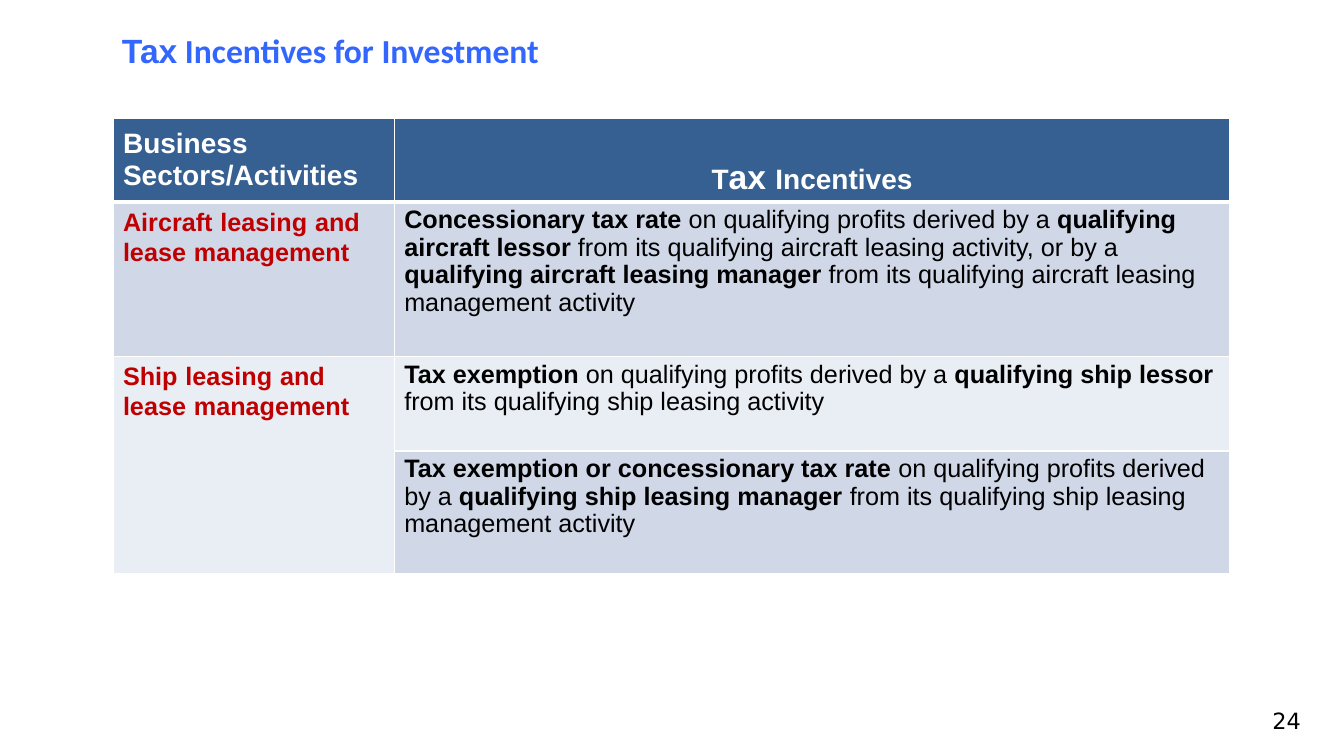
from lxml import etree
from pptx import Presentation
from pptx import util as u
from pptx.dml.color import RGBColor
from pptx.enum import text
from pptx.oxml.ns import qn

W, H = 13.33, 7.5
COLORS = {"title": "3366FF", "header": "376092", "dark": "D0D8E8", "light": "E9EDF4",
          "sector": "C00000", "body": "000000", "white": "FFFFFF"}
COLUMNS = [2.79, 8.29]
ROWS = [0.83, 1.53, 0.94, 1.22]
SECTORS = ["Aircraft leasing and lease management", "Ship leasing and lease management"]
INCENTIVES = [
    ["Concessionary tax rate ", "on qualifying profits derived by a ",
     "qualifying aircraft lessor", " from its qualifying aircraft leasing activity, or by a ",
     "qualifying aircraft leasing manager ",
     "from its qualifying aircraft leasing management activity"],
    ["Tax exemption ", "on qualifying profits derived by a ",
     "qualifying ship lessor ", "from its qualifying ship leasing activity"],
    ["Tax exemption or concessionary tax rate ", "on qualifying profits derived by a ",
     "qualifying ship leasing manager ",
     "from its qualifying ship leasing management activity"],
]


def add_run(p, words, size=18, bold=True, color="body", font="Arial"):
    r = p.add_run()
    r.text = words
    r.font.size = u.Pt(size)
    r.font.bold = bold
    r.font.name = font
    r.font.color.rgb = RGBColor.from_string(COLORS[color])


def add_box(slide, left, top, width, height, anchor):
    tf = slide.shapes.add_textbox(*map(u.Inches, (left, top, width, height))).text_frame
    tf.word_wrap = True
    tf.vertical_anchor = anchor
    return tf


def add_title(slide, left, top, width, height):
    tf = add_box(slide, left, top, width, height, text.MSO_ANCHOR.TOP)
    tf.margin_left = tf.margin_right = tf.margin_top = tf.margin_bottom = 0
    p = tf.paragraphs[0]
    add_run(p, "Tax", size=24, color="title")
    add_run(p, " Incentives for Investment", size=24, color="title", font="Calibri")


def add_page_number(slide, left, top, width, height):
    p = add_box(slide, left, top, width, height, text.MSO_ANCHOR.MIDDLE).paragraphs[0]
    p.alignment = text.PP_ALIGN.RIGHT
    add_run(p, "24", size=16, bold=False, font="DejaVu Sans")


def style_cell(cell, fill, top=1, bottom=1):
    props = cell._tc.get_or_add_tcPr()
    for side, width in (("L", 1), ("R", 1), ("T", top), ("B", bottom)):
        ln = etree.SubElement(props, qn(f"a:ln{side}"), w=str(u.Pt(width)))
        solid = etree.SubElement(ln, qn("a:solidFill"))
        etree.SubElement(solid, qn("a:srgbClr"), val=COLORS["white"])
    cell.fill.solid()
    cell.fill.fore_color.rgb = RGBColor.from_string(COLORS[fill])


def fill_header(table):
    sector, incentive = table.cell(0, 0), table.cell(0, 1)
    p = sector.text_frame.paragraphs[0]
    for words, size in (("Business", 20), (" ", 24), ("Sectors/Activities", 20)):
        add_run(p, words, size=size, color="white")
    incentive.vertical_anchor = text.MSO_ANCHOR.BOTTOM
    p = incentive.text_frame.paragraphs[0]
    p.alignment = text.PP_ALIGN.CENTER
    for words, size in (("T", 20), ("ax ", 24), ("Incentives", 20)):
        add_run(p, words, size=size, color="white")


def fill_sector(cell, label):
    p = cell.text_frame.paragraphs[0]
    p.line_spacing = 0.97
    for i, word in enumerate(label.split()):
        if i:
            add_run(p, " ", size=20, color="sector")
        add_run(p, word, color="sector")


def fill_incentive(cell, parts):
    p = cell.text_frame.paragraphs[0]
    p.line_spacing = 0.97
    for i, part in enumerate(parts):
        add_run(p, part, bold=i % 2 == 0)


def add_incentive_table(slide, left, top):
    frame = slide.shapes.add_table(len(ROWS), len(COLUMNS), *map(
        u.Inches, (left, top, sum(COLUMNS), sum(ROWS))))
    table = frame.table
    for column, width in zip(table.columns, COLUMNS):
        column.width = u.Inches(width)
    for row, height in zip(table.rows, ROWS):
        row.height = u.Inches(height)
    for i, fill in enumerate(["header", "dark", "light", "dark"]):
        for cell in table.rows[i].cells:
            style_cell(cell, fill, top=3 if i == 1 else 1, bottom=3 if i == 0 else 1)
    table.cell(2, 0).merge(table.cell(3, 0))
    fill_header(table)
    for i, label in enumerate(SECTORS, 1):
        fill_sector(table.cell(i, 0), label)
    for i, parts in enumerate(INCENTIVES, 1):
        fill_incentive(table.cell(i, 1), parts)


def main():
    prs = Presentation()
    prs.slide_width, prs.slide_height = u.Inches(W), u.Inches(H)
    slide = prs.slides.add_slide(prs.slide_layouts[6])
    add_title(slide, 1.21, 0.3, W - 1.21, 0.45)
    add_incentive_table(slide, 1.12, 1.17)
    add_page_number(slide, 9.9, 6.95, 3.1, 0.4)
    prs.save("out.pptx")


if __name__ == "__main__":
    main()
